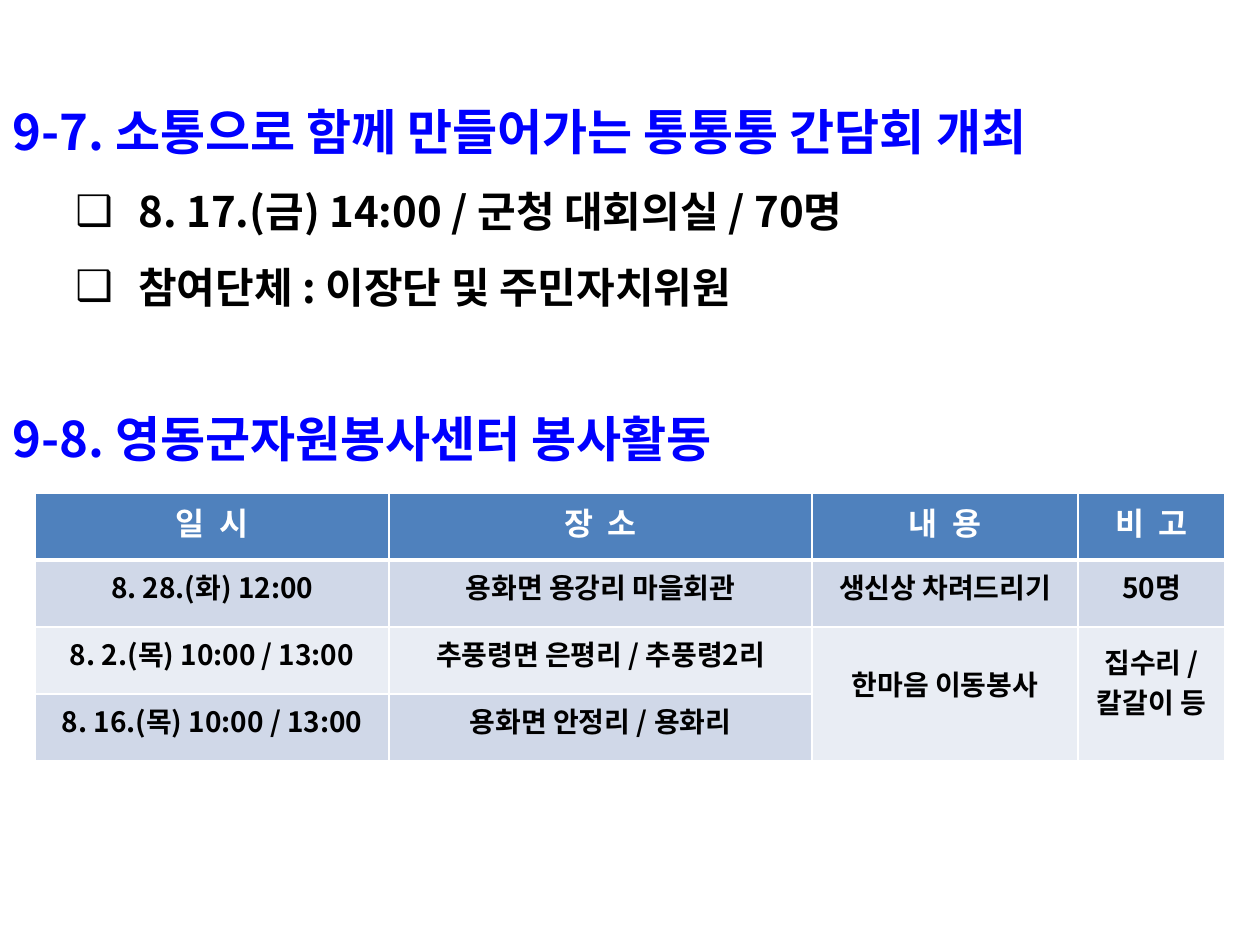
from lxml.etree import SubElement
from pptx import Presentation
from pptx.dml.color import RGBColor
from pptx.enum.text import PP_ALIGN as Align
from pptx.oxml.ns import qn
from pptx.util import Pt

PX = 914400 / 126
KOREAN = "Noto Sans CJK KR"
BLUE, BLACK, WHITE = "0000FF", "000000", "FFFFFF"


def px(length):
    return round(length * PX)


def write(paragraph, text, size, color, latin=KOREAN):
    run = paragraph.add_run()
    run.text = text
    style = {"name": latin, "size": Pt(size), "bold": True}
    for key, value in style.items():
        setattr(run.font, key, value)
    run.font.color.rgb = RGBColor.from_string(color)
    SubElement(run._r.get_or_add_rPr(), qn("a:ea"), typeface=KOREAN)


deck = Presentation()
deck.slide_width, deck.slide_height = px(1260), px(945)
slide = deck.slides.add_slide(deck.slide_layouts[6])

# Headings with their bulleted details
sections = [
    (66, 246, "9-7. 소통으로 함께 만들어가는 통통통 간담회 개최",
     ["8. 17.(금) 14:00 / 군청 대회의실 / 70명",
      "참여단체 : 이장단 및 주민자치위원"]),
    (373, 374, "9-8. 영동군자원봉사센터 봉사활동", []),
]
for top, height, heading, details in sections:
    section = slide.shapes.add_textbox(0, px(top), px(1260), px(height)).text_frame
    section.word_wrap = True
    title = section.paragraphs[0]
    title.line_spacing = 1.5
    write(title, heading, 28, BLUE)
    for detail in details:
        item = section.add_paragraph()
        item.level = 1
        item.line_spacing = 1.5
        props = item._p.get_or_add_pPr()
        props.set("marL", str(px(126)))
        props.set("indent", str(px(-63)))
        bullet_color = SubElement(props, qn("a:buClr"))
        SubElement(bullet_color, qn("a:srgbClr"), val=BLACK)
        SubElement(props, qn("a:buFont"), typeface="Arial")
        SubElement(props, qn("a:buChar"), char="❑")
        write(item, detail, 24, BLACK)

# Volunteer schedule
schedule = [
    ["일  시", "장  소", "내  용", "비  고"],
    ["8. 28.(화) 12:00", "용화면 용강리 마을회관", "생신상 차려드리기", "50명"],
    ["8. 2.(목) 10:00 / 13:00", "추풍령면 은평리 / 추풍령2리",
     "한마음 이동봉사", "집수리 / 칼갈이 등"],
    ["8. 16.(목) 10:00 / 13:00", "용화면 안정리 / 용화리", "", ""],
]
row_fills = ["4F81BD", "D0D8E8", "E9EDF4", "D0D8E8"]
col_widths = [354, 423, 266, 147]
row_height = 67
table = slide.shapes.add_table(
    len(schedule), len(col_widths), px(35), px(493),
    px(sum(col_widths)), px(row_height * len(schedule))).table
for column, width in zip(table.columns, col_widths):
    column.width = px(width)
for row in table.rows:
    row.height = px(row_height)

for r, (texts, fill) in enumerate(zip(schedule, row_fills)):
    for c, text in enumerate(texts):
        cell = table.cell(r, c)
        # White borders, thicker under the header
        for side in "LRTB":
            thick = (r, side) in [(0, "B"), (1, "T")]
            border = SubElement(cell._tc.get_or_add_tcPr(), qn(f"a:ln{side}"),
                                w=str(Pt(3 if thick else 1)))
            line = SubElement(border, qn("a:solidFill"))
            SubElement(line, qn("a:srgbClr"), val=WHITE)
        cell.fill.solid()
        cell.fill.fore_color.rgb = RGBColor.from_string(fill)
        if text:
            label = cell.text_frame.paragraphs[0]
            label.alignment = Align.CENTER
            if r == 0:
                write(label, text, 18, WHITE, "Arial")
            else:
                write(label, text, 16, BLACK)

# Cells shared by the last two dates
for c, top_margin in [(2, 36), (3, 14)]:
    shared = table.cell(2, c)
    shared.merge(table.cell(3, c))
    shared.margin_top = px(top_margin)

deck.save("out.pptx")
